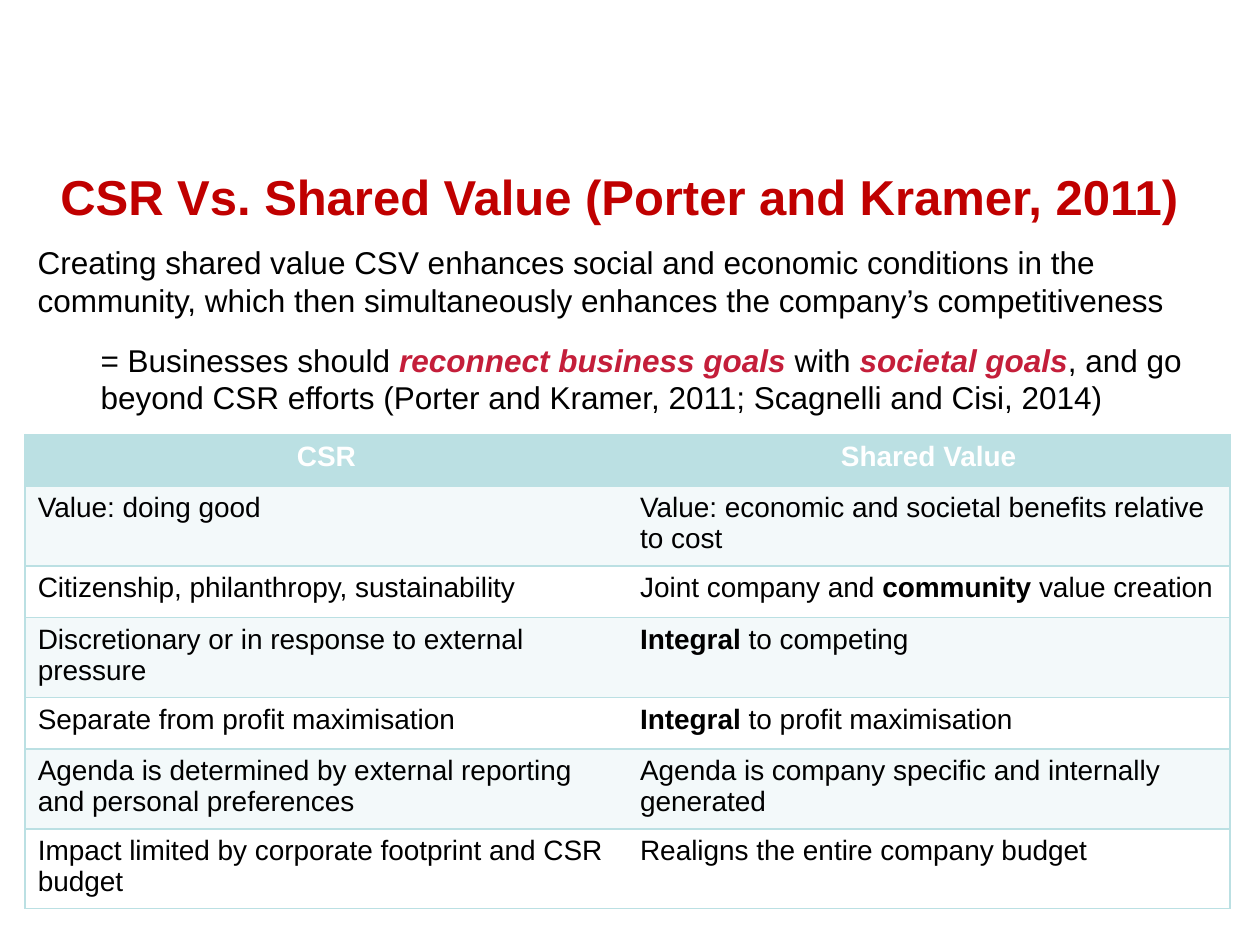
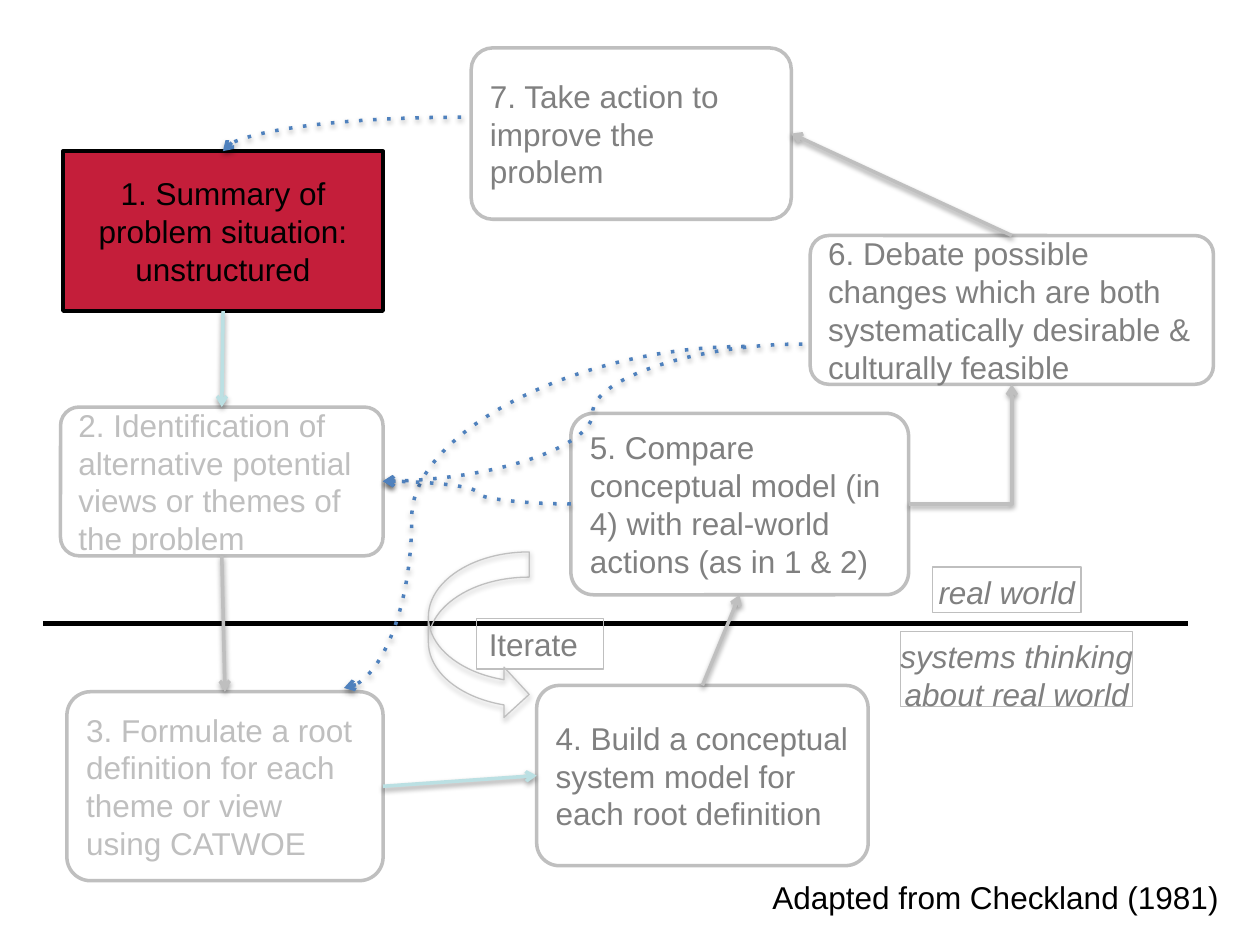
from dataclasses import dataclass
from typing import Any, NamedTuple

import pptx
import pptx.dml.color
import pptx.enum.dml
import pptx.enum.shapes
import pptx.enum.text
import pptx.oxml
import pptx.oxml.ns
import pptx.util

Pt = pptx.util.Pt
ShapeKind = pptx.enum.shapes.MSO_SHAPE
Link = pptx.enum.shapes.MSO_CONNECTOR
Align = pptx.enum.text.PP_ALIGN
Anchor = pptx.enum.text.MSO_ANCHOR
TOP, LEFT, BOTTOM, RIGHT = range(4)


@dataclass(frozen=True)
class Theme:
    font: str = "Arial"
    title_size: float = 28
    body_size: float = 18
    table_size: float = 16
    black: str = "000000"
    white: str = "FFFFFF"
    title_red: str = "C00000"
    crimson: str = "C41E3A"
    aqua: str = "BBE0E3"
    pale_aqua: str = "F3F9FA"
    grey: str = "808080"
    light_grey: str = "BFBFBF"
    blue: str = "4F81BD"


THEME = Theme()


class Area(NamedTuple):
    left: float
    top: float
    width: float
    height: float


class Span(NamedTuple):
    text: str
    color: str = THEME.black
    size: float = THEME.body_size
    bold: bool = False
    italic: bool = False


@dataclass(frozen=True)
class Step:
    area: Area
    lines: tuple[str, ...]
    color: str = THEME.grey
    border: str = THEME.light_grey
    fill: str | None = None
    corner: float = 0.125
    align: Any = Align.LEFT


@dataclass(frozen=True)
class Label:
    area: Area
    lines: tuple[str, ...]
    align: Any = Align.CENTER
    wrap: bool = False


@dataclass(frozen=True)
class Flow:
    """A straight arrow between the sides of two numbered steps."""
    start: int
    start_side: int
    end: int
    end_side: int
    color: str = THEME.light_grey


@dataclass(frozen=True)
class Route:
    """A curved or bent arrow between two points."""
    start: tuple[float, float]
    end: tuple[float, float]
    preset: str = "curvedConnector3"
    color: str = THEME.blue
    dotted: bool = True
    bend: int | None = None


TITLE = "CSR Vs. Shared Value (Porter and Kramer, 2011)"
INTRO = [Span("Creating shared value CSV enhances social and economic conditions in the community, "
              "which then simultaneously enhances the company’s competitiveness")]
GOALS = [
    Span("= Businesses should "),
    Span("reconnect business goals ", THEME.crimson, bold=True, italic=True),
    Span("with "),
    Span("societal goals", THEME.crimson, bold=True, italic=True),
    Span(", and go beyond CSR efforts (Porter and Kramer, 2011; Scagnelli and Cisi, 2014)"),
]
# Every second part of a cell, split at the asterisks, is bold.
COMPARISON = [
    ("*CSR*", "*Shared Value*"),
    ("Value: doing good", "Value: economic and societal benefits relative to cost"),
    ("Citizenship, philanthropy, sustainability",
     "Joint company and *community* value creation"),
    ("Discretionary or in response to external pressure", "*Integral* to competing"),
    ("Separate from profit maximisation", "*Integral* to profit maximisation"),
    ("Agenda is determined by external reporting and personal preferences",
     "Agenda is company specific and internally generated"),
    ("Impact limited by corporate footprint and CSR budget",
     "Realigns the entire company budget"),
]

STEPS = {
    1: Step(Area(36, 86.4, 182.9, 91.4),
            ("1. Summary of problem situation:", "unstructured"),
            THEME.black, THEME.black, THEME.crimson, 0, Align.CENTER),
    6: Step(Area(463, 134.6, 230.4, 85),
            ("6. Debate possible changes which are both systematically desirable "
             "& culturally feasible",)),
    4: Step(Area(306.7, 391.7, 189.4, 103),
            ("4. Build a conceptual system model for each root definition",)),
    7: Step(Area(269.3, 27.4, 182.9, 97.9), ("7. Take action to improve the problem",)),
    3: Step(Area(38.2, 395.3, 180.7, 108),
            ("3. Formulate a root definition for each theme or view using CATWOE",),
            THEME.light_grey),
    2: Step(Area(34.6, 232.6, 184.3, 85),
            ("2. Identification of alternative potential views or themes of the problem",),
            THEME.light_grey),
    5: Step(Area(326.2, 236.2, 193, 103.7),
            ("5. Compare conceptual model (in 4) with real-world actions (as in 1 & 2)",)),
}
WORLD_LABELS = [
    Label(Area(532.8, 324, 85, 25.9), ("real world",)),
    Label(Area(514.8, 360.7, 132.5, 43.2), ("systems thinking", "about real world")),
]
ITERATE = Label(Area(272.2, 353.5, 72.7, 28.8), ("Iterate",), Align.LEFT, True)
FLOWS = [
    Flow(6, TOP, 7, RIGHT),
    Flow(4, TOP, 5, BOTTOM),
    Flow(3, RIGHT, 4, LEFT, THEME.aqua),
    Flow(2, BOTTOM, 3, TOP),
    Flow(1, BOTTOM, 2, TOP, THEME.aqua),
]
ROUTES = [
    Route((519.2, 288), (578.2, 219.6), "bentConnector2", THEME.light_grey, False),
    Route((263.5, 67), (127.4, 86.4), "curvedConnector2"),
    Route((425.5, 198), (196.6, 393.1), bend=83100),
    Route((458.6, 196.6), (218.9, 275)),
    Route((326.2, 288), (218.9, 275)),
]


def rgb(color: str) -> pptx.dml.color.RGBColor:
    return pptx.dml.color.RGBColor.from_string(color)


def apply(target: Any, values: dict[str, Any]) -> None:
    for name, value in values.items():
        setattr(target, name, value)


def points(area: Area) -> list[int]:
    return [Pt(length) for length in area]


def xml(markup: str) -> Any:
    """Parse one DrawingML element written without its namespace declaration."""
    tag, rest = markup.split(" ", 1)
    return pptx.oxml.parse_xml(f"{tag} {pptx.oxml.ns.nsdecls('a')} {rest}")


def write(para: Any, spans: list[Span], align: Any = Align.LEFT) -> None:
    para.alignment = align
    for span in spans:
        run = para.add_run()
        run.text = span.text
        apply(run.font, {"name": THEME.font, "size": Pt(span.size),
                         "bold": span.bold, "italic": span.italic})
        run.font.color.rgb = rgb(span.color)


def write_lines(frame: Any, lines: list[list[Span]], align: Any = Align.LEFT) -> None:
    for index, spans in enumerate(lines):
        para = frame.paragraphs[0] if index == 0 else frame.add_paragraph()
        write(para, spans, align)


def add_text(page: Any, area: Area, lines: list[list[Span]], **frame_values: Any) -> Any:
    frame = page.shapes.add_textbox(*points(area)).text_frame
    apply(frame, {"word_wrap": True, **frame_values})
    write_lines(frame, lines)
    return frame


def set_line(line: Any, color: str, width: float) -> None:
    line.color.rgb = rgb(color)
    line.width = Pt(width)


def set_shadow(item: Any, opacity: int, distance: float) -> None:
    properties = item._element.spPr
    for effects in properties.findall(pptx.oxml.ns.qn("a:effectLst")):
        properties.remove(effects)
    properties.append(xml(
        f'<a:effectLst ><a:outerShdw blurRad="{Pt(3.1)}" dist="{Pt(distance)}" dir="5400000" '
        f'rotWithShape="0"><a:srgbClr val="{THEME.black}"><a:alpha val="{opacity * 1000}"/>'
        '</a:srgbClr></a:outerShdw></a:effectLst>'))


def add_outline(page: Any, kind: Any, area: Area, border: str, width: float,
                fill: str | None = None) -> Any:
    box = page.shapes.add_shape(kind, *points(area))
    box.shadow.inherit = False
    if fill:
        box.fill.solid()
        box.fill.fore_color.rgb = rgb(fill)
    else:
        box.fill.background()
    set_line(box.line, border, width)
    return box


def add_step(page: Any, step: Step) -> Any:
    box = add_outline(page, ShapeKind.ROUNDED_RECTANGLE, step.area, step.border, 2, step.fill)
    box.adjustments[0] = step.corner
    apply(box.text_frame, {"word_wrap": True, "vertical_anchor": Anchor.MIDDLE})
    write_lines(box.text_frame, [[Span(text, step.color)] for text in step.lines], step.align)
    return box


def add_label(page: Any, label: Label, italic: bool) -> None:
    box = add_outline(page, ShapeKind.RECTANGLE, label.area, THEME.light_grey, 0.75)
    apply(box.text_frame, {"word_wrap": label.wrap, "vertical_anchor": Anchor.TOP})
    lines = [[Span(text, THEME.grey, italic=italic)] for text in label.lines]
    write_lines(box.text_frame, lines, label.align)


def finish_arrow(connector: Any, color: str, dotted: bool = False) -> None:
    set_line(connector.line, color, 2)
    line = connector._element.spPr.find(pptx.oxml.ns.qn("a:ln"))
    if dotted:
        line.append(xml('<a:prstDash val="dot"/>'))
    line.append(xml('<a:tailEnd type="arrow"/>'))
    set_shadow(connector, 38, 1.6)


def add_flow(page: Any, flow: Flow, boxes: dict[int, Any]) -> None:
    connector = page.shapes.add_connector(Link.STRAIGHT, 0, 0, 0, 0)
    connector.begin_connect(boxes[flow.start], flow.start_side)
    connector.end_connect(boxes[flow.end], flow.end_side)
    finish_arrow(connector, flow.color)


def add_route(page: Any, route: Route) -> None:
    ends = [Pt(length) for length in route.start + route.end]
    connector = page.shapes.add_connector(Link.CURVE, *ends)
    geometry = connector._element.spPr.find(pptx.oxml.ns.qn("a:prstGeom"))
    geometry.set("prst", route.preset)
    if route.bend is not None:
        guides = geometry.find(pptx.oxml.ns.qn("a:avLst"))
        guides.append(xml(f'<a:gd name="adj1" fmla="val {route.bend}"/>'))
    finish_arrow(connector, route.color, route.dotted)


def set_borders(cell: Any, open_side: str) -> None:
    """Rule every side of a cell but the open one."""
    properties = cell._tc.get_or_add_tcPr()
    for side in "LRTB":
        paint = ("<a:noFill/>" if side == open_side else
                 f'<a:solidFill><a:srgbClr val="{THEME.aqua}"/></a:solidFill>')
        properties.append(xml(f'<a:ln{side} w="{Pt(1)}">{paint}</a:ln{side}>'))


def add_comparison(page: Any) -> None:
    area = Area(14.4, 248.4, 688.4, 29.5 * len(COMPARISON))
    table = page.shapes.add_table(len(COMPARISON), 2, *points(area)).table
    table.horz_banding = False
    for row, texts in enumerate(COMPARISON):
        header = row == 0
        fill = THEME.aqua if header else THEME.pale_aqua if row % 2 else THEME.white
        color = THEME.white if header else THEME.black
        for column, text in enumerate(texts):
            cell = table.cell(row, column)
            set_borders(cell, "RL"[column])
            cell.fill.solid()
            cell.fill.fore_color.rgb = rgb(fill)
            spans = [Span(part, color, THEME.table_size, bold=index % 2 == 1)
                     for index, part in enumerate(text.split("*")) if part]
            write(cell.text_frame.paragraphs[0], spans, Align.CENTER if header else Align.LEFT)


def build_comparison_slide(page: Any) -> None:
    title = Span(TITLE, THEME.title_red, THEME.title_size, bold=True)
    add_text(page, Area(27.4, 100.8, 665.3, 54.7), [[title]],
             vertical_anchor=Anchor.MIDDLE, margin_top=0, margin_bottom=Pt(32))
    add_comparison(page)
    frame = add_text(page, Area(14.4, 135.4, 676.8, 111.6), [INTRO, GOALS])
    goals = frame.paragraphs[1]
    apply(goals, {"level": 1, "space_before": Pt(12.5)})
    goals._p.get_or_add_pPr().set("marL", str(Pt(36)))


def build_method_slide(page: Any) -> None:
    divider = page.shapes.add_connector(Link.STRAIGHT, Pt(24.5), Pt(356.4), Pt(679), Pt(356.4))
    set_line(divider.line, THEME.black, 3)
    divider._element.spPr.append(xml("<a:effectLst />"))
    for label in WORLD_LABELS:
        add_label(page, label, italic=True)
    boxes = {number: add_step(page, step) for number, step in STEPS.items()}
    add_text(page, Area(434.2, 498.2, 272.9, 28.8), [[Span("Adapted from Checkland (1981)")]],
             word_wrap=False)
    for flow in FLOWS:
        add_flow(page, flow, boxes)
    for route in ROUTES:
        add_route(page, route)
    loop = add_outline(page, ShapeKind.CURVED_RIGHT_ARROW, Area(244.8, 315.4, 57.6, 95.8),
                       THEME.light_grey, 0.75)
    set_shadow(loop, 35, 1.8)
    add_label(page, ITERATE, italic=False)


def main() -> None:
    deck = pptx.Presentation()
    apply(deck, {"slide_width": Pt(720), "slide_height": Pt(540)})
    for build in (build_comparison_slide, build_method_slide):
        build(deck.slides.add_slide(deck.slide_layouts[6]))
    deck.save("out.pptx")


if __name__ == "__main__":
    main()
